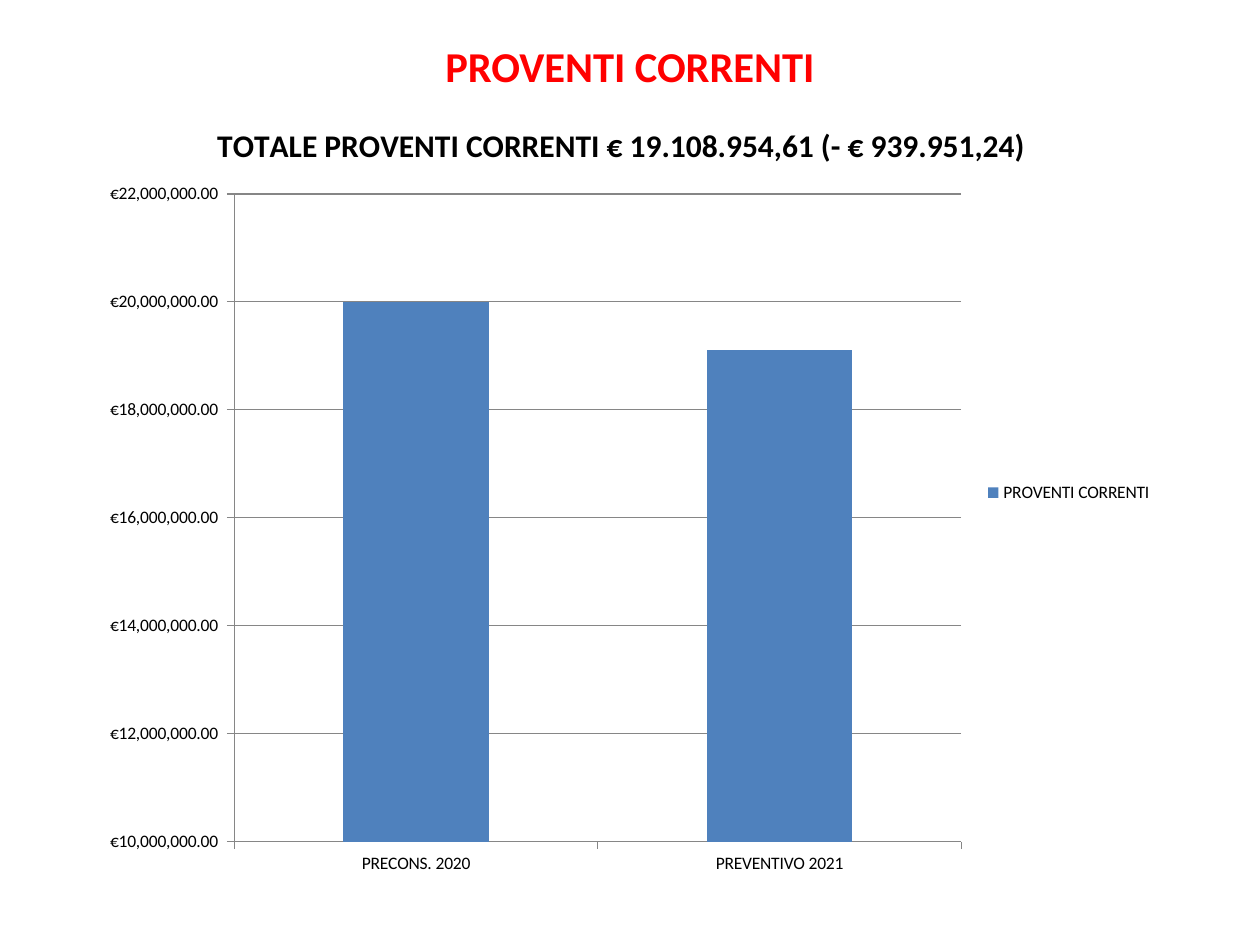
from lxml.etree import SubElement
from pptx import Presentation
from pptx.chart.data import CategoryChartData as Data
from pptx.dml.color import RGBColor as Rgb
from pptx.enum.chart import XL_CHART_TYPE as Kind, XL_LEGEND_POSITION as Side
from pptx.enum.chart import XL_TICK_MARK as Tick
from pptx.enum.text import MSO_ANCHOR as Anchor, PP_ALIGN as Align
from pptx.oxml.ns import qn
from pptx.util import Inches, Pt

HUES = {"head": "FF0000", "text": "000000", "bar": "4F81BD", "line": "868686"}
NAME = "PROVENTI CORRENTI"
TOTAL = "TOTALE PROVENTI CORRENTI € 19.108.954,61 (- € 939.951,24) "
SUMS = {"PRECONS. 2020": 20000000, "PREVENTIVO 2021": 19100000}
EURO = '"€"#,##0.00_)'


def hue(key):
    """Return the named colour."""
    return Rgb.from_string(HUES[key])


def apply(item, values):
    """Set each attribute of the item from a dict."""
    for key, value in values.items():
        setattr(item, key, value)


def style(font, size, key, bold=False):
    """Give a font its face, size, weight and colour."""
    apply(font, {"name": "Calibri", "size": Pt(size), "bold": bold})
    font.color.rgb = hue(key)


def rule(line):
    """Draw a thin grey line."""
    line.color.rgb = hue("line")
    line.width = Pt(0.75)


def add_head(slide, box):
    """Place the slide heading in the box."""
    frame = slide.shapes.add_textbox(*map(Inches, box)).text_frame
    apply(frame, {"word_wrap": True, "vertical_anchor": Anchor.MIDDLE,
                  "margin_top": 0, "margin_bottom": Inches(0.25)})
    para = frame.paragraphs[0]
    apply(para, {"text": NAME, "alignment": Align.CENTER})
    style(para.runs[0].font, 24.3, "head", True)


def fix_plot(chart, box, spot):
    """Pin the inner plot to a spot in inches within the chart box."""
    area = chart.plots._plotArea
    for old in area.findall(qn("c:layout")):
        area.remove(old)
    layout = SubElement(area, qn("c:layout"))
    area.insert(0, layout)
    manual = SubElement(layout, qn("c:manualLayout"))
    parts = {"layoutTarget": "inner", "xMode": "edge", "yMode": "edge"}
    sides = box[2:] * 2
    parts.update(zip("xywh", (part / side for part, side in zip(spot, sides))))
    for tag, value in parts.items():
        SubElement(manual, qn(f"c:{tag}")).set("val", str(value))


def add_bars(slide, box):
    """Place the column chart in the box."""
    data = Data(number_format=EURO)
    data.categories = list(SUMS)
    data.add_series(NAME, list(SUMS.values()))
    frame = slide.shapes.add_chart(Kind.COLUMN_CLUSTERED, *map(Inches, box), data)
    chart = frame.chart
    style(chart.font, 10, "text")
    apply(chart, {"has_title": True, "has_legend": True})
    title = chart.chart_title
    title.include_in_layout = False
    title.text_frame.text = TOTAL
    style(title.text_frame.paragraphs[0].runs[0].font, 18, "text", True)
    apply(chart.legend, {"position": Side.RIGHT, "include_in_layout": False})

    axis = chart.value_axis
    apply(axis, {"minimum_scale": 10000000, "maximum_scale": 22000000,
                 "major_unit": 2000000, "has_major_gridlines": True})
    apply(axis.tick_labels, {"number_format": EURO,
                             "number_format_is_linked": False})
    rule(axis.major_gridlines.format.line)
    for each in (axis, chart.category_axis):
        each.major_tick_mark = Tick.OUTSIDE
        rule(each.format.line)

    plot = chart.plots[0]
    apply(plot, {"gap_width": 150, "vary_by_categories": False})
    fill = plot.series[0].format.fill
    fill.solid()
    fill.fore_color.rgb = hue("bar")
    fix_plot(chart, box, (1.19, 0.78, 5.77, 5.14))


def main():
    """Build and save the slide."""
    deck = Presentation()
    apply(deck, {"slide_width": Inches(10), "slide_height": Inches(7.5)})
    slide = deck.slides.add_slide(deck.slide_layouts[6])
    add_head(slide, (0.5, 0.3, 9, 0.69))
    add_bars(slide, (0.67, 0.76, 8.58, 6.3))
    deck.save("out.pptx")


if __name__ == "__main__":
    main()
